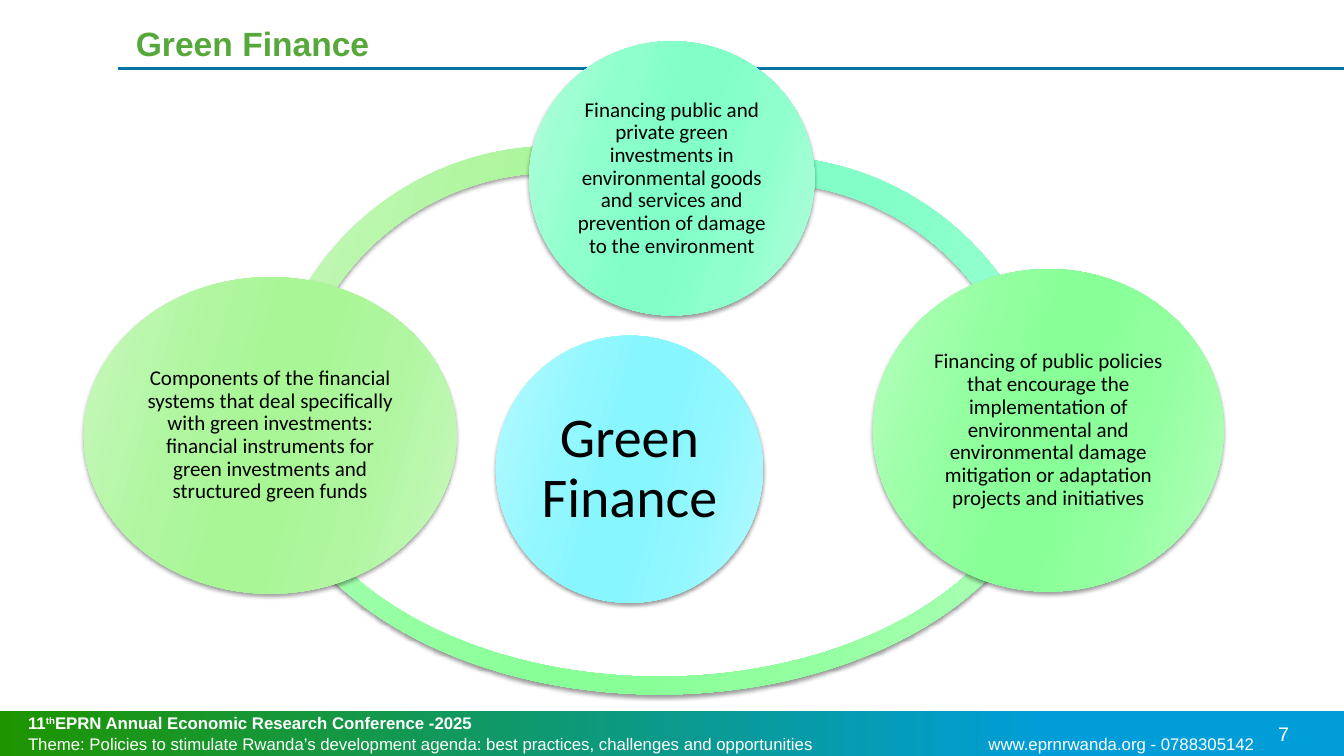
"""Build the Green Finance slide: a cycle of three components around a hub."""
from lxml import etree
from pptx import Presentation, oxml, util as u
from pptx.dml.color import RGBColor
from pptx.enum import shapes, text
from pptx.oxml.ns import nsdecls, qn

TITLE = "Green Finance"
PAGE = "7"
FOOTER = [
    [("11", {"bold": True}), ("th", {"bold": True, "raised": True}),
     ("EPRN Annual Economic Research Conference -2025", {"bold": True})],
    [("Theme: Policies to stimulate Rwanda’s development agenda: best practices, "
      "challenges and opportunities\twww.eprnrwanda.org - 0788305142", {})],
]
ARCS = [
    ("lime", (188.6, 104.4, 414.7, 414.7), (180.25, 294.6, 0.046)),
    ("green", (188.6, 121.7, 565.2, 374.4), (359.62, 179.62, 0.034)),
    ("mint", (339.1, 111.6, 414.7, 414.7), (250.78, 356.71, 0.046)),
]
CIRCLES = [
    ("aqua", (354.2, 239.8, 190.8, 190.8), "hub", 4.3, "Green Finance"),
    ("mint", (378, 29.5, 203.8, 195.8), "body", 1.5,
     "Financing public and private green investments in environmental goods "
     "and services and prevention of damage to the environment"),
    ("green", (623.5, 192.2, 250.6, 230.4), "body", 1.5,
     "Financing of public policies that encourage the implementation of environmental "
     "and environmental damage mitigation or adaptation projects and initiatives"),
    ("lime", (59.8, 198, 266.4, 226.1), "body", 1.5,
     "Components of the financial systems that deal specifically with green investments: "
     "financial instruments for green investments and structured green funds"),
]
THEME = {
    "sizes": {"title": 24, "hub": 40, "body": 15, "footer": 12, "page": 14},
    "title": "55A839", "ink": "000000", "light": "FFFFFF", "rule": "0075A2",
    "footer": [(0, "1E9500"), (78, "009DD9")],
    "shades": {
        "lime": ("C8F8BE", "B0F6A0", "A8F696"),
        "green": ("B5FFBD", "94FFA1", "89FF97"),
        "mint": ("B2FEDB", "8EFFCD", "82FFC9"),
        "aqua": ("B5F9FF", "93F7FF", "87F6FF"),
    },
    "heading_font": "Arial", "body_font": "Calibri",
}
SIZES = THEME["sizes"]
WIDTH, HEIGHT, FOOTER_TOP, ADDRESS_TAB = 960, 540, 507.6, 686


def points(values):
    return [u.Pt(value) for value in values]


def write(shape, paragraphs, size, color, font, bold=False, align=text.PP_ALIGN.LEFT,
          insets=(7.2, 3.6, 7.2, 3.6), spacing=None, tab=None):
    """Fill a shape with paragraphs given as a string or lists of (text, format)."""
    frame = shape.text_frame
    frame.word_wrap = True
    frame.vertical_anchor = text.MSO_ANCHOR.MIDDLE
    (frame.margin_left, frame.margin_top,
     frame.margin_right, frame.margin_bottom) = points(insets)
    if isinstance(paragraphs, str):
        paragraphs = [[(paragraphs, {})]]
    for index, runs in enumerate(paragraphs):
        paragraph = frame.add_paragraph() if index else frame.paragraphs[0]
        paragraph.alignment = align
        if spacing:
            paragraph.line_spacing = spacing
        if tab:
            tabs = etree.SubElement(paragraph._p.get_or_add_pPr(), qn("a:tabLst"))
            etree.SubElement(tabs, qn("a:tab"), pos=str(u.Pt(tab)), algn="l")
        for words, style in runs:
            run = paragraph.add_run()
            run.text = words
            run.font.name, run.font.size = font, u.Pt(size)
            run.font.bold = style.get("bold", bold)
            run.font.color.rgb = RGBColor.from_string(color)
            if style.get("raised"):
                run._r.get_or_add_rPr().set("baseline", "30000")


def add_gradient_shape(slide, kind, box, stops, angle=0):
    shape = slide.shapes.add_shape(kind, *points(box))
    shape.line.fill.background()
    shape.shadow.inherit = False
    marks = "".join(f'<a:gs pos="{place * 1000}"><a:srgbClr val="{color}"/></a:gs>'
                    for place, color in stops)
    gradient = oxml.parse_xml(
        f'<a:gradFill {nsdecls("a")} rotWithShape="1"><a:gsLst>{marks}</a:gsLst>'
        f'<a:lin ang="{angle * 60000}" scaled="0"/></a:gradFill>')
    shape._element.spPr.find(qn("a:prstGeom")).addnext(gradient)
    return shape


def add_cycle_part(slide, kind, box, shade):
    edge, middle, core = THEME["shades"][shade]
    stops = zip((0, 30, 45, 55, 73, 100), (edge, middle, core, core, middle, edge))
    part = add_gradient_shape(slide, kind, box, stops, 16)
    part._element.spPr.find(qn("a:effectLst")).append(oxml.parse_xml(
        f'<a:outerShdw {nsdecls("a")} blurRad="{u.Pt(3)}" dist="{u.Pt(2)}" dir="5400000" '
        f'rotWithShape="0"><a:srgbClr val="{THEME["ink"]}"><a:alpha val="40000"/>'
        '</a:srgbClr></a:outerShdw>'))
    return part


def main():
    deck = Presentation()
    deck.slide_width, deck.slide_height = points((WIDTH, HEIGHT))
    slide = deck.slides.add_slide(deck.slide_layouts[6])

    rule = slide.shapes.add_connector(
        shapes.MSO_CONNECTOR.STRAIGHT, *points((84.2, 49, WIDTH, 49)))
    rule.line.color.rgb = RGBColor.from_string(THEME["rule"])
    rule.line.width = u.Pt(2.25)
    etree.SubElement(rule._element.spPr, qn("a:effectLst"))

    footer = add_gradient_shape(slide, shapes.MSO_SHAPE.RECTANGLE,
                                (0, FOOTER_TOP, WIDTH, HEIGHT - FOOTER_TOP), THEME["footer"])
    write(footer, FOOTER, SIZES["footer"], THEME["light"], THEME["heading_font"],
          insets=(20, 3.6, 7.2, 3.6), tab=ADDRESS_TAB)

    for shade, box, (start, end, thickness) in ARCS:
        arc = add_cycle_part(slide, shapes.MSO_SHAPE.BLOCK_ARC, box, shade)
        for index, value in enumerate((start * 0.6, end * 0.6, thickness)):
            arc.adjustments[index] = value

    for shade, box, role, inset, words in CIRCLES:
        circle = add_cycle_part(slide, shapes.MSO_SHAPE.OVAL, box, shade)
        write(circle, words, SIZES[role], THEME["ink"], THEME["body_font"],
              align=text.PP_ALIGN.CENTER, insets=(inset,) * 4, spacing=0.9)

    page = slide.shapes.add_textbox(*points((873.4, FOOTER_TOP, 87, HEIGHT - FOOTER_TOP)))
    write(page, PAGE, SIZES["page"], THEME["light"], THEME["heading_font"],
          align=text.PP_ALIGN.CENTER)
    title = slide.shapes.add_textbox(*points((90, 12.2, 800, 36.7)))
    write(title, TITLE, SIZES["title"], THEME["title"], THEME["heading_font"], bold=True)

    deck.save("out.pptx")


if __name__ == "__main__":
    main()
